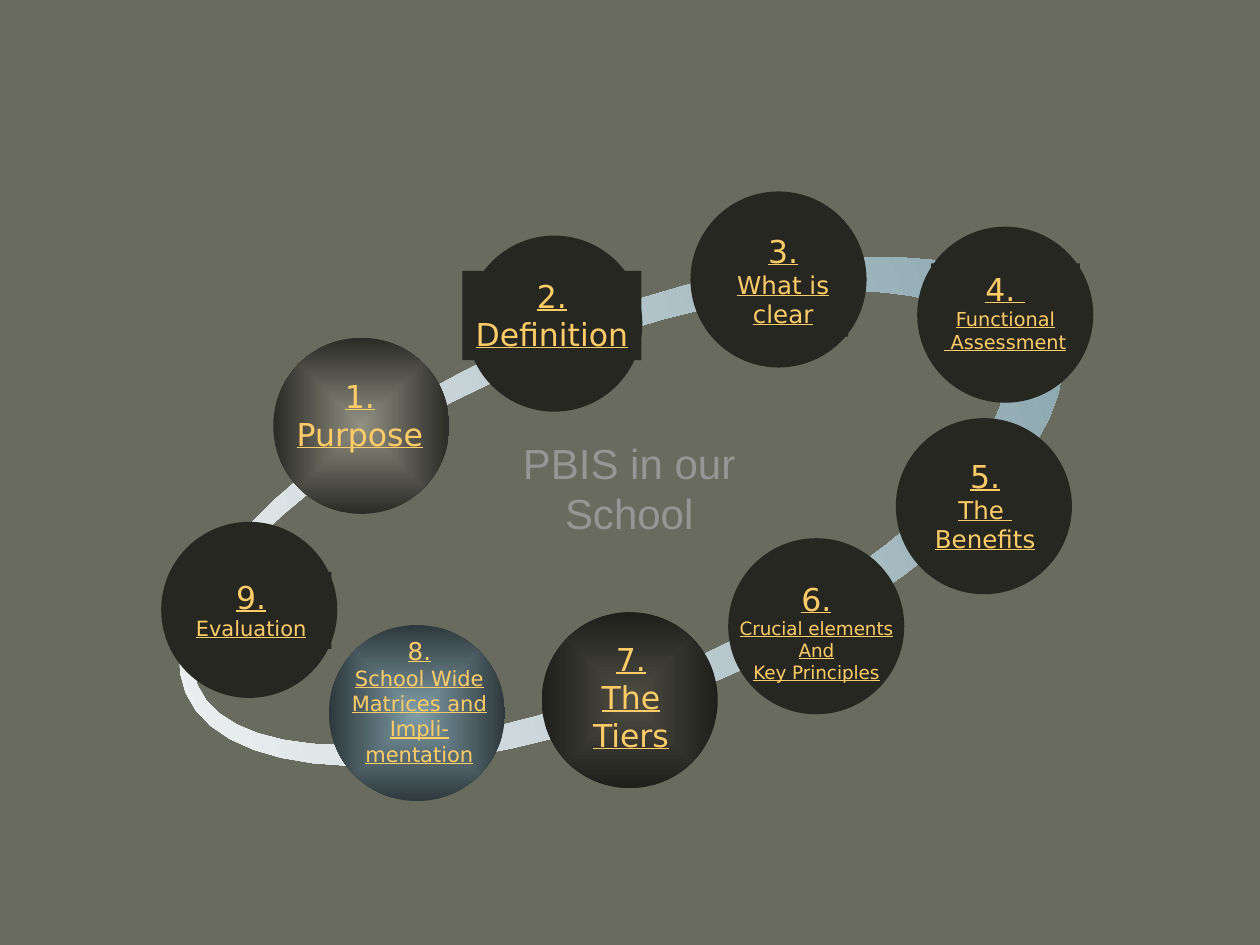
from math import cos, pi, sin

from lxml import etree
from pptx import Presentation
from pptx.dml.color import RGBColor
from pptx.enum.shapes import MSO_SHAPE
from pptx.enum.text import MSO_ANCHOR, MSO_AUTO_SIZE, PP_ALIGN
from pptx.oxml.ns import qn
from pptx.util import Cm, Pt

OVAL, RECT = MSO_SHAPE.OVAL, MSO_SHAPE.RECTANGLE
TOP, CENTER = MSO_ANCHOR.TOP, PP_ALIGN.CENTER
GROW, FIXED = MSO_AUTO_SIZE.SHAPE_TO_FIT_TEXT, MSO_AUTO_SIZE.NONE

BACKGROUND = RGBColor(0x68, 0x6B, 0x5D)
DARK = RGBColor(0x27, 0x27, 0x22)
GOLD = RGBColor(0xFF, 0xCC, 0x66)
GRAY = RGBColor(0x96, 0x96, 0x96)
PALE = RGBColor(0xF7, 0xF8, 0xF8)
STEEL = RGBColor(0x80, 0x9E, 0xA8)
STONE_GLOW = (RGBColor(0x90, 0x90, 0x82), RGBColor(0x2B, 0x2B, 0x27))
DARK_GLOW = (RGBColor(0x4E, 0x4E, 0x44), RGBColor(0x1F, 0x1F, 0x1B))
STEEL_GLOW = (STEEL, RGBColor(0x2E, 0x39, 0x3D))

DIAMETER = 3.55
RING_CENTER = (12.52, 10.31)
RING_TILT = -22.6
RING_OUTER = (0, 0, 9.51, 3.9)
RING_INNER = (-0.47, -0.05, 8.76, 3.37)
RING_STEPS = 60

TITLE = ("PBIS in our School", (9.09, 8.69, 7.19, 2.31))

# circle position, glow, label box, lines with sizes, wrap, grow
STEPS = [
    ((5.51, 6.81), STONE_GLOW, (5.72, 7.47, 3.07, 1.8),
     [("1.", 18), ("Purpose", 18)], False, True),
    ((9.4, 4.75), None, (9.32, 5.46, 3.61, 1.8),
     [("2.", 18), ("Definition", 18)], False, True),
    ((10.92, 12.34), DARK_GLOW, (11.13, 12.78, 3.18, 2.54),
     [("7.", 18), ("The", 18), ("Tiers", 18)], True, False),
    ((6.63, 12.6), STEEL_GLOW, (6.55, 12.7, 3.81, 1.7),
     [("8.", 14), ("School Wide Matrices and Impli-mentation", 12)], True, False),
    ((3.25, 10.52), None, (3.45, 11.53, 3.23, 1.55),
     [("9.", 18), ("Evaluation", 12)], True, True),
    ((13.92, 3.86), None, (14.48, 4.55, 2.62, 2.24),
     [("3.", 18), ("What is", 14), ("clear", 14)], True, True),
    ((18.49, 4.57), None, (18.77, 5.31, 3, 1.96),
     [("4. ", 18), ("Functional", 11), (" Assessment", 11)], False, True),
    ((18.06, 8.43), None, (18.59, 9.09, 2.54, 2.21),
     [("5.", 18), ("The ", 14), ("Benefits", 14)], False, True),
    ((14.68, 10.85), None, (15.19, 11.56, 2.54, 2.13),
     [("6.", 18), ("Crucial elements", 10.5), ("And", 10.5),
      ("Key Principles", 10.5)], False, False),
]


def set_gradient(sp, colors, radial=False):
    sp.fill.gradient()
    sp.fill.gradient_angle = 0
    for stop, color in zip(sp.fill.gradient_stops, colors):
        stop.color.rgb = color
    if radial:
        grad = sp._element.spPr.find(qn("a:gradFill"))
        grad.remove(grad.find(qn("a:lin")))
        shade = etree.SubElement(grad, qn("a:path"), path="shape")
        etree.SubElement(shade, qn("a:fillToRect"),
                         l="50000", t="50000", r="50000", b="50000")


def finish(sp):
    sp.line.fill.background()
    sp.shadow.inherit = False


def write(sp, lines, font="DejaVu Sans", color=GOLD, underline=True,
          wrap=True, grow=True):
    tf = sp.text_frame
    tf.word_wrap = wrap
    tf.auto_size = GROW if grow else FIXED
    tf.vertical_anchor = TOP
    for i, (text, size) in enumerate(lines):
        p = tf.add_paragraph() if i else tf.paragraphs[0]
        p.alignment = CENTER
        r = p.add_run()
        r.text = text
        r.font.size = Pt(size)
        r.font.name = font
        r.font.color.rgb = color
        if underline:
            r.font.underline = True


def ellipse_points(cx, cy, a, b, turn):
    angles = [turn * 2 * pi * i / RING_STEPS for i in range(RING_STEPS)]
    return [(Cm(RING_CENTER[0] + cx + a * cos(t)),
             Cm(RING_CENTER[1] + cy + b * sin(t))) for t in angles]


def add_ring(shapes):
    outer = ellipse_points(*RING_OUTER, turn=1)
    inner = ellipse_points(*RING_INNER, turn=-1)
    builder = shapes.build_freeform(*outer[0])
    builder.add_line_segments(outer[1:], close=True)
    builder.move_to(*inner[0])
    builder.add_line_segments(inner[1:], close=True)
    sp = builder.convert_to_shape()
    set_gradient(sp, (PALE, STEEL))
    sp.rotation = RING_TILT
    finish(sp)


def add_step(shapes, place, glow, box, lines, wrap, grow):
    group = shapes.add_group_shape().shapes
    sp = group.add_shape(OVAL, *map(Cm, (*place, DIAMETER, DIAMETER)))
    if glow:
        set_gradient(sp, glow, radial=True)
        label = group.add_textbox(*map(Cm, box))
    else:
        sp.fill.solid()
        sp.fill.fore_color.rgb = DARK
        label = group.add_shape(RECT, *map(Cm, box))
        label.fill.solid()
        label.fill.fore_color.rgb = DARK
        finish(label)
    finish(sp)
    write(label, lines, wrap=wrap, grow=grow)


def add_title(shapes, text, box):
    sp = shapes.add_textbox(*map(Cm, box))
    write(sp, [(text, 24)], font="Arial", color=GRAY, underline=False)
    fill = sp.text_frame.paragraphs[0].runs[0].font._element.find(qn("a:solidFill"))
    effects = etree.Element(qn("a:effectLst"))
    shadow = etree.SubElement(effects, qn("a:outerShdw"), dist="35921", dir="2700000")
    etree.SubElement(shadow, qn("a:srgbClr"), val="000000")
    fill.addnext(effects)


def main():
    prs = Presentation()
    prs.slide_width, prs.slide_height = Cm(25.4), Cm(19.05)
    s = prs.slides.add_slide(prs.slide_layouts[6])
    s.background.fill.solid()
    s.background.fill.fore_color.rgb = BACKGROUND
    add_ring(s.shapes)
    for step in STEPS[:4]:
        add_step(s.shapes, *step)
    add_title(s.shapes, *TITLE)
    for step in STEPS[4:]:
        add_step(s.shapes, *step)
    prs.save("out.pptx")


if __name__ == "__main__":
    main()
